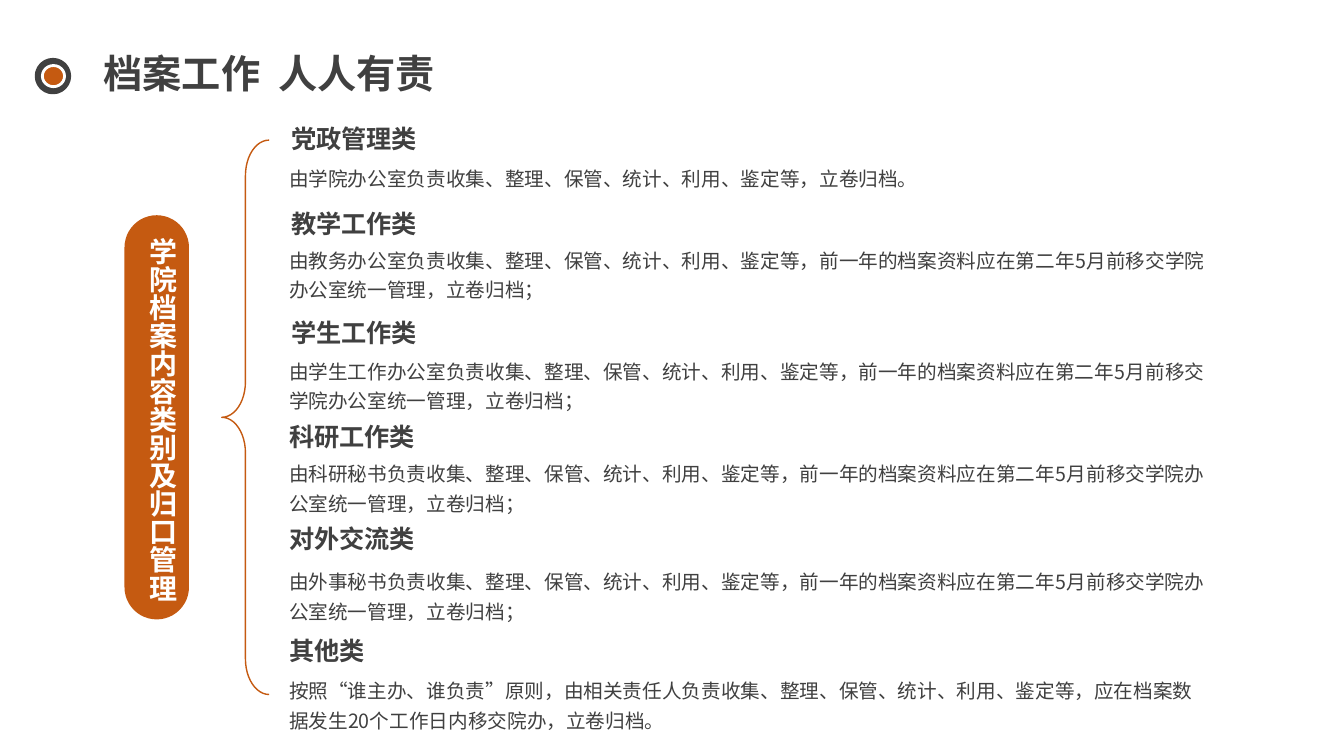
"""Build the slide on archive categories and who is responsible for each."""
import dataclasses

import pptx
import pptx.dml.color
import pptx.enum.shapes
import pptx.enum.text
import pptx.oxml
import pptx.oxml.ns
import pptx.util

SLIDE_WIDTH = pptx.util.Inches(13.33)
SLIDE_HEIGHT = pptx.util.Inches(7.5)
COLUMNS, ROWS = 80, 45
COLORS = {"ink": "404040", "accent": "C55A11", "teal": "458388", "white": "FFFFFF"}
TITLE_FONT = "Noto Sans CJK SC"
FONT = "Noto Sans CJK JP"
SHAPES = pptx.enum.shapes.MSO_SHAPE
BODY_LEFT, BODY_WIDTH = 16.62, 55.8
HEADING_WIDTH, HEADING_HEIGHT = 17.34, 2.4
HANDOVER = "负责收集、整理、保管、统计、利用、鉴定等，前一年的档案资料应在第二年5月前移交学院办公室统一管理，立卷归档；"


@dataclasses.dataclass(frozen=True)
class Area:
    left: float
    top: float
    width: float
    height: float

    def lengths(self) -> tuple[int, int, int, int]:
        column, row = SLIDE_WIDTH / COLUMNS, SLIDE_HEIGHT / ROWS
        return (round(self.left * column), round(self.top * row),
                round(self.width * column), round(self.height * row))


@dataclasses.dataclass(frozen=True)
class Figure:
    kind: int
    area: Area
    fill: str | None = None
    line: str | None = None
    weight: float = 0
    adjustments: tuple[float, ...] = ()


@dataclasses.dataclass(frozen=True)
class Category:
    heading: str
    duty: str
    heading_left: float
    heading_top: float
    duty_top: float
    duty_height: float = 4.02


FIGURES = (
    Figure(SHAPES.OVAL, Area(2.4, 3.78, 1.5, 1.5), "teal", "ink", 8),
    Figure(SHAPES.OVAL, Area(2.52, 3.9, 1.32, 1.26), "accent", "white", 2),
    Figure(SHAPES.ROUNDED_RECTANGLE, Area(7.41, 12.81, 3.84, 24.06), "accent",
           adjustments=(0.5,)),
    Figure(SHAPES.LEFT_BRACE, Area(13.2, 8.34, 2.82, 33), line="accent", weight=1,
           adjustments=(0.75, 0.5)),
)
CATEGORIES = (
    Category("党政管理类", "由学院办公室负责收集、整理、保管、统计、利用、鉴定等，立卷归档。",
             16.74, 7.02, 9.3, 2.22),
    Category("教学工作类", "由教务办公室" + HANDOVER, 16.74, 12.12, 14.16),
    Category("学生工作类", "由学生工作办公室" + HANDOVER, 16.74, 18.6, 20.76),
    Category("科研工作类", "由科研秘书" + HANDOVER, BODY_LEFT, 24.78, 26.88),
    Category("对外交流类", "由外事秘书" + HANDOVER, BODY_LEFT, 30.84, 33.3),
    Category("其他类", "按照“谁主办、谁负责”原则，由相关责任人负责收集、整理、保管、统计、利用、"
             "鉴定等，应在档案数据发生20个工作日内移交院办，立卷归档。", BODY_LEFT, 37.5, 39.78),
)


def color(name: str) -> pptx.dml.color.RGBColor:
    return pptx.dml.color.RGBColor.from_string(COLORS[name])


def draw_figure(page, figure: Figure) -> None:
    shape = page.shapes.add_shape(figure.kind, *figure.area.lengths())
    shape.shadow.inherit = False
    for index, value in enumerate(figure.adjustments):
        shape.adjustments[index] = value
    if figure.fill:
        shape.fill.solid()
        shape.fill.fore_color.rgb = color(figure.fill)
    else:
        shape.fill.background()
    if figure.line:
        shape.line.color.rgb = color(figure.line)
        shape.line.width = pptx.util.Pt(figure.weight)
    else:
        shape.line.fill.background()


def write_text(page, text: str, area: Area, *, size: float, bold: bool = False,
               ink: str = "ink", font: str = FONT, spacing: float | None = None,
               vertical: bool = False) -> None:
    box = page.shapes.add_textbox(*area.lengths())
    frame = box.text_frame
    frame.word_wrap = not vertical
    frame.auto_size = pptx.enum.text.MSO_AUTO_SIZE.SHAPE_TO_FIT_TEXT
    if vertical:
        body = box.element.find(".//" + pptx.oxml.ns.qn("a:bodyPr"))
        body.set("vert", "eaVert")
    para = frame.paragraphs[0]
    if spacing:
        para.line_spacing = spacing
    span = para.add_run()
    span.text = text
    span.font.size = pptx.util.Pt(size)
    span.font.bold = bold
    span.font.color.rgb = color(ink)
    span.font.name = font
    east_asian = pptx.oxml.parse_xml(
        f'<a:ea {pptx.oxml.ns.nsdecls("a")} typeface="{font}"/>')
    para.runs[0].font._element.append(east_asian)


def draw_category(page, category: Category) -> None:
    write_text(page, category.heading,
               Area(category.heading_left, category.heading_top,
                    HEADING_WIDTH, HEADING_HEIGHT), size=18, bold=True)
    write_text(page, category.duty,
               Area(BODY_LEFT, category.duty_top, BODY_WIDTH, category.duty_height),
               size=14, spacing=1.25)


def main() -> None:
    deck = pptx.Presentation()
    deck.slide_width, deck.slide_height = SLIDE_WIDTH, SLIDE_HEIGHT
    page = deck.slides.add_slide(deck.slide_layouts[6])
    for figure in FIGURES:
        draw_figure(page, figure)
    write_text(page, "档案工作  人人有责", Area(5.58, 2.64, 33.06, 3.42),
               size=28, bold=True, font=TITLE_FONT)
    write_text(page, "学院档案内容类别及归口管理", Area(7.74, 13.56, 3.24, 22.5),
               size=20, bold=True, ink="white", vertical=True)
    for category in CATEGORIES:
        draw_category(page, category)
    deck.save("out.pptx")


if __name__ == "__main__":
    main()
